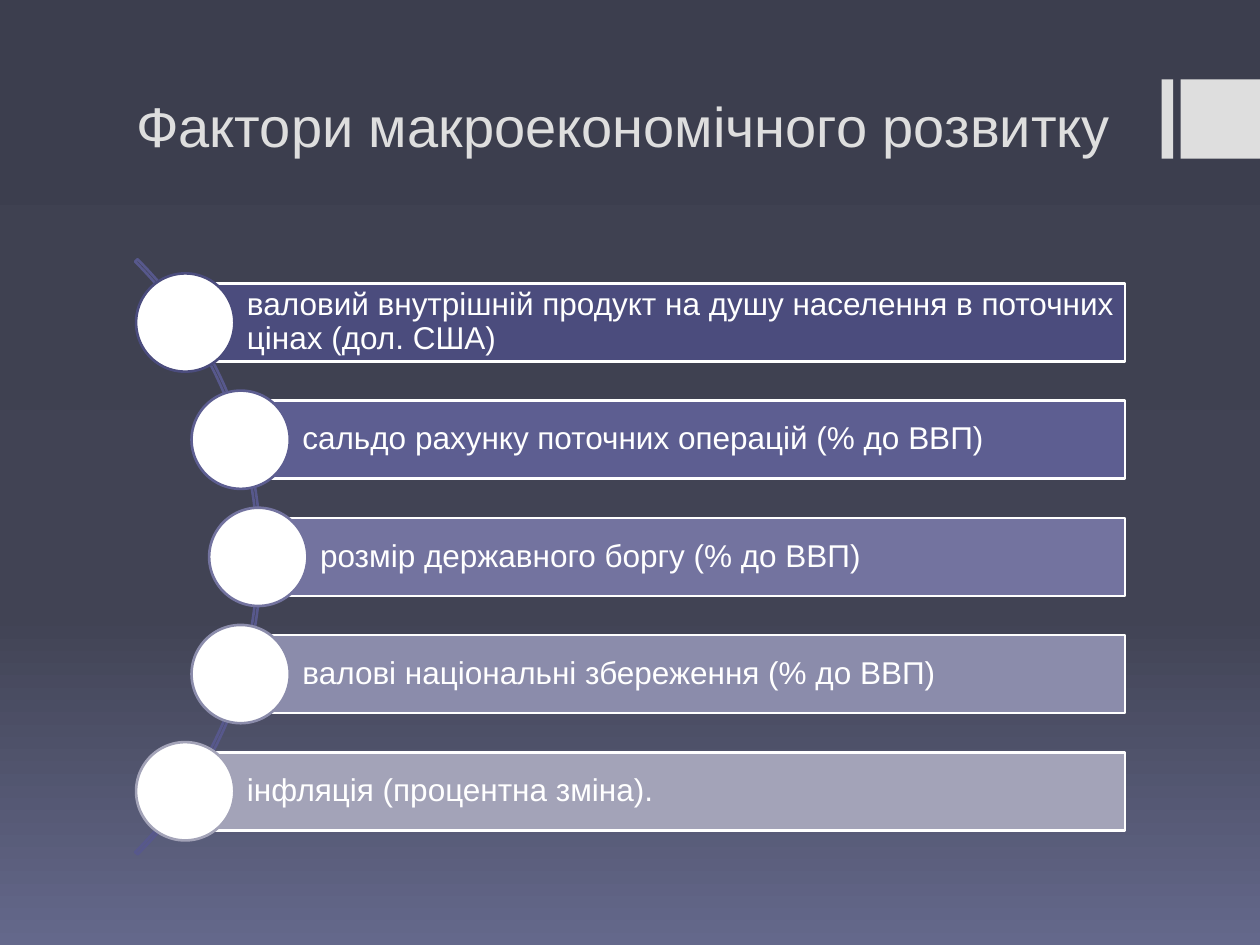
from copy import deepcopy

from pptx import Presentation
from pptx.dml.color import RGBColor
from pptx.enum.shapes import MSO_SHAPE
from pptx.enum.text import MSO_ANCHOR, MSO_AUTO_SIZE, PP_ALIGN
from pptx.oxml.ns import qn
from pptx.util import Inches, Pt

RECTANGLE, OVAL, BLOCK_ARC = MSO_SHAPE.RECTANGLE, MSO_SHAPE.OVAL, MSO_SHAPE.BLOCK_ARC
LEFT, MIDDLE, BOTTOM = PP_ALIGN.LEFT, MSO_ANCHOR.MIDDLE, MSO_ANCHOR.BOTTOM
NO_AUTOFIT = MSO_AUTO_SIZE.NONE
TITLE_ONLY = 5

# Factor text, bar colour, left edge of the bar (also the circle centre)
FACTORS = [
    ("валовий внутрішній продукт на душу населення в поточних цінах (дол. США)", "4B4C7D", 1.47),
    ("сальдо рахунку поточних операцій (% до ВВП)", "5D5E91", 1.91),
    ("розмір державного боргу (% до ВВП)", "73739F", 2.05),
    ("валові національні збереження (% до ВВП)", "8B8CAB", 1.91),
    ("інфляція (процентна зміна).", "A3A3B8", 1.47),
]
FIRST_CENTRE, ROW_PITCH = 2.56, 0.93
BAR_RIGHT, BAR_HEIGHT, CIRCLE_SIZE = 8.93, 0.62, 0.78


def color(hex_string):
    return RGBColor.from_string(hex_string)


class SlideBuilder:
    font_name = "Arial"
    light = "DEDEDE"
    white = "FFFFFF"
    line_width = Pt(1.5)

    def __init__(self, slide):
        self.slide = slide

    def background(self, stops, angle):
        fill = self.slide.background.fill
        fill.gradient()
        fill.gradient_angle = angle
        stop_list = self.slide.element.find(".//" + qn("a:gsLst"))
        while len(stop_list) < len(stops):
            stop_list.append(deepcopy(stop_list[-1]))
        for stop, (position, hex_string) in zip(fill.gradient_stops, stops):
            stop.position = position
            stop.color.rgb = color(hex_string)

    def style_text(self, paragraph, size, hex_string):
        paragraph.alignment = LEFT
        paragraph.font.name = self.font_name
        paragraph.font.size = Pt(size)
        paragraph.font.color.rgb = color(hex_string)

    def title(self, text, left, top, width, height):
        title = self.slide.shapes.title
        title.left, title.top = Inches(left), Inches(top)
        title.width, title.height = Inches(width), Inches(height)
        frame = title.text_frame
        frame.text = text
        frame.auto_size = NO_AUTOFIT
        frame.vertical_anchor = BOTTOM
        self.style_text(frame.paragraphs[0], 32, self.light)

    def shape(self, kind, left, top, width, height, fill=None, line=None):
        shape = self.slide.shapes.add_shape(
            kind, Inches(left), Inches(top), Inches(width), Inches(height))
        shape.shadow.inherit = False
        if fill:
            shape.fill.solid()
            shape.fill.fore_color.rgb = color(fill)
        else:
            shape.fill.background()
        if line:
            shape.line.color.rgb = color(line)
            shape.line.width = self.line_width
        else:
            shape.line.fill.background()
        return shape

    def arc(self, left, top, size, line, adjustments):
        arc = self.shape(BLOCK_ARC, left, top, size, size, line=line)
        for index, value in enumerate(adjustments):
            arc.adjustments[index] = value

    def factor(self, text, hex_string, left, centre):
        bar = self.shape(RECTANGLE, left, centre - BAR_HEIGHT / 2, BAR_RIGHT - left,
                         BAR_HEIGHT, hex_string, self.white)
        frame = bar.text_frame
        frame.text = text
        frame.word_wrap = True
        frame.vertical_anchor = MIDDLE
        frame.margin_left = Inches(0.49)
        frame.margin_top = frame.margin_right = frame.margin_bottom = Inches(0.05)
        paragraph = frame.paragraphs[0]
        paragraph.line_spacing = 0.9
        self.style_text(paragraph, 18, self.white)
        self.shape(OVAL, left - CIRCLE_SIZE / 2, centre - CIRCLE_SIZE / 2,
                   CIRCLE_SIZE, CIRCLE_SIZE, self.white, hex_string)


def main():
    presentation = Presentation()
    presentation.slide_width, presentation.slide_height = Inches(10), Inches(7.5)
    layout = presentation.slide_layouts[TITLE_ONLY]
    builder = SlideBuilder(presentation.slides.add_slide(layout))

    # Background, corner marks and title
    builder.background([(0, "3C3E4E"), (0.65, "414354"), (1, "64688B")], 270)
    for left, width in ((9.22, 0.09), (9.37, 0.63)):
        builder.shape(RECTANGLE, left, 0.63, width, 0.63, builder.light)
    builder.title("Фактори макроекономічного розвитку", 0.98, 0.6, 8, 0.71)

    # Curved list: arc behind, then one bar and circle per factor
    builder.arc(-4.61, 1.08, 6.68, "57588C", (189, 27, 0.004))
    for row, (text, hex_string, left) in enumerate(FACTORS):
        builder.factor(text, hex_string, left, FIRST_CENTRE + row * ROW_PITCH)

    presentation.save("out.pptx")


if __name__ == "__main__":
    main()
